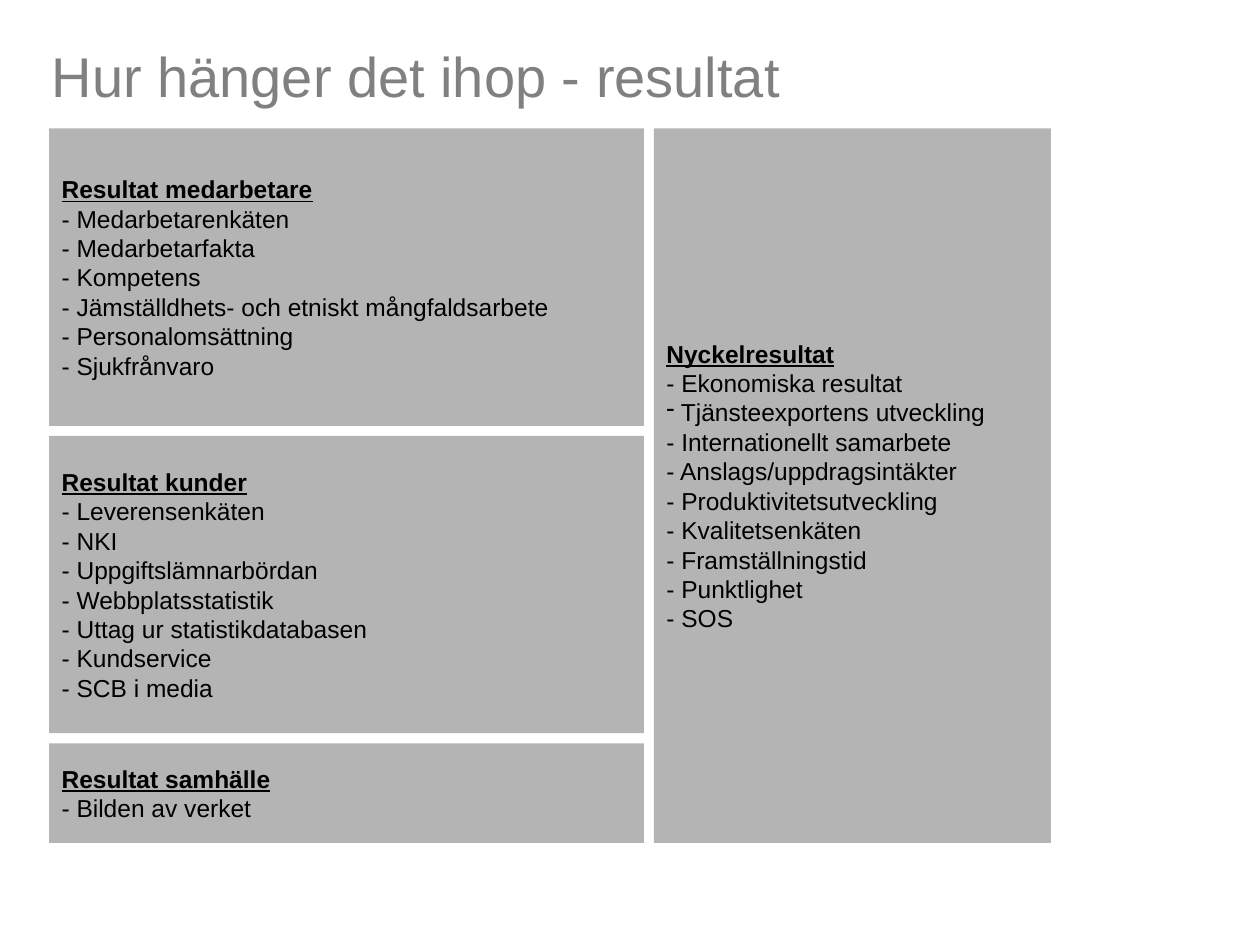
from lxml.etree import SubElement
from pptx import Presentation
from pptx.dml.color import RGBColor
from pptx.enum.shapes import MSO_SHAPE
from pptx.enum.text import MSO_ANCHOR, PP_ALIGN
from pptx.oxml.ns import qn
from pptx.util import Inches, Pt

THEME = {
    "font": "Arial",
    "title_size": Pt(32),
    "body_size": Pt(14),
    "title_color": RGBColor(0x80, 0x80, 0x80),
    "text_color": RGBColor(0, 0, 0),
    "panel_color": RGBColor(0xB5, 0xB4, 0xB4),
}

# Panel grid in inches
LEFT, TOP, GAP = 0.39, 1.02, 0.08
RESULT_WIDTH, KEY_WIDTH = 4.72, 3.15
TOTAL_HEIGHT = 5.67

RESULT_PANELS = [
    (2.36, "Resultat medarbetare", [
        "- Medarbetarenkäten", "- Medarbetarfakta", "- Kompetens",
        "- Jämställdhets- och etniskt mångfaldsarbete",
        "- Personalomsättning", "- Sjukfrånvaro"]),
    (2.36, "Resultat kunder", [
        "- Leverensenkäten", "- NKI", "- Uppgiftslämnarbördan",
        "- Webbplatsstatistik", "- Uttag ur statistikdatabasen",
        "- Kundservice", "- SCB i media"]),
    (0.79, "Resultat samhälle", ["- Bilden av verket"]),
]
BULLETED_ITEM = " Tjänsteexportens utveckling"
KEY_ITEMS = [
    "- Ekonomiska resultat", BULLETED_ITEM, "- Internationellt samarbete",
    "- Anslags/uppdragsintäkter", "- Produktivitetsutveckling",
    "- Kvalitetsenkäten", "- Framställningstid", "- Punktlighet", "- SOS"]


def format_font(font, size, color, **values):
    for name, value in {"name": THEME["font"], "size": size, **values}.items():
        setattr(font, name, value)
    font.color.rgb = color


def add_panel(shapes, left, top, width, height, heading, items):
    panel = shapes.add_shape(MSO_SHAPE.RECTANGLE, Inches(left), Inches(top),
                             Inches(width), Inches(height))
    panel.shadow.inherit = False
    panel.fill.solid()
    panel.fill.fore_color.rgb = THEME["panel_color"]
    panel.line.fill.background()
    frame = panel.text_frame
    frame.word_wrap = True
    frame.vertical_anchor = MSO_ANCHOR.MIDDLE
    for index, text in enumerate([heading, *items]):
        paragraph = frame.add_paragraph() if index else frame.paragraphs[0]
        paragraph.alignment = PP_ALIGN.LEFT
        if text == BULLETED_ITEM:
            properties = paragraph._p.get_or_add_pPr()
            SubElement(properties, qn("a:buChar"), char="-")
        run = paragraph.add_run()
        run.text = text
        format_font(run.font, THEME["body_size"], THEME["text_color"],
                    bold=index == 0, underline=index == 0)


presentation = Presentation()
presentation.slide_width, presentation.slide_height = Inches(10), Inches(7.5)
slide = presentation.slides.add_slide(presentation.slide_layouts[5])

# Title
title = slide.shapes.title
title_box = {"left": 0.31, "top": 0.23, "width": 9, "height": 0.73}
for name, value in title_box.items():
    setattr(title, name, Inches(value))
title.text_frame.text = "Hur hänger det ihop - resultat"
title.text_frame.vertical_anchor = MSO_ANCHOR.MIDDLE
title_paragraph = title.text_frame.paragraphs[0]
title_paragraph.alignment = PP_ALIGN.LEFT
format_font(title_paragraph.runs[0].font, THEME["title_size"], THEME["title_color"])

# Key results on the right, the three result areas stacked on the left
panels = slide.shapes.add_group_shape()
add_panel(panels.shapes, LEFT + RESULT_WIDTH + GAP, TOP, KEY_WIDTH, TOTAL_HEIGHT,
          "Nyckelresultat", KEY_ITEMS)
top = TOP
for height, heading, items in RESULT_PANELS:
    add_panel(panels.shapes, LEFT, top, RESULT_WIDTH, height, heading, items)
    top += height + GAP

presentation.save("out.pptx")
